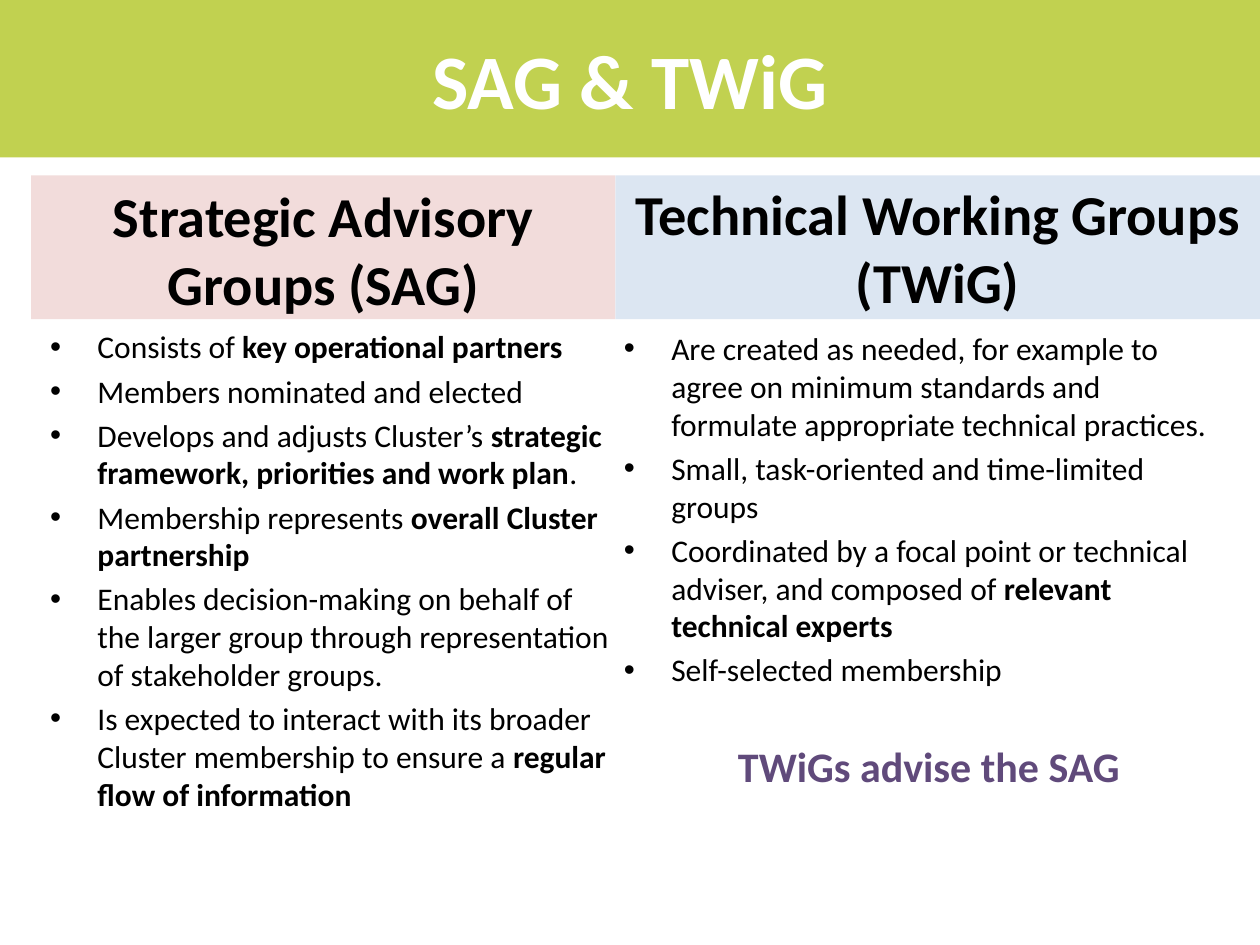
from dataclasses import dataclass

from lxml import etree
from pptx import Presentation
from pptx import util as u
from pptx.dml.color import RGBColor
from pptx.enum import shapes, text
from pptx.oxml.ns import qn

Pt = u.Pt


@dataclass(frozen=True)
class Theme:
    font: str = "Calibri"
    title_size: float = 44
    heading_size: float = 32.2
    body_size: float = 18
    callout_size: float = 24
    ink: str = "000000"
    paper: str = "FFFFFF"
    green: str = "C1D150"
    pink: str = "F2DCDB"
    blue: str = "DCE6F2"
    purple: str = "604A7B"


class SlideBuilder:
    def __init__(self, slide, theme):
        self.slide = slide
        self.theme = theme

    def fill(self, shape, color):
        shape.fill.solid()
        shape.fill.fore_color.rgb = RGBColor.from_string(color)

    def style(self, paragraph, size, color, bold=None):
        font = paragraph.font
        font.name, font.size, font.bold = self.theme.font, Pt(size), bold
        font.color.rgb = RGBColor.from_string(color)

    def frame(self, shape, anchor, side=7.2, edge=3.6):
        """Set wrapping, anchor and insets of a shape's text."""
        frame = shape.text_frame
        frame.word_wrap = True
        frame.auto_size = text.MSO_AUTO_SIZE.NONE
        frame.vertical_anchor = anchor
        frame.margin_left = frame.margin_right = Pt(side)
        frame.margin_top = frame.margin_bottom = Pt(edge)
        return frame

    def centered(self, paragraph, words, size, color):
        paragraph.text = words
        paragraph.alignment = text.PP_ALIGN.CENTER
        self.style(paragraph, size, color, bold=True)

    def title(self, words, width, height):
        title = self.slide.shapes.title
        title.left, title.top = Pt(0), Pt(0)
        title.width, title.height = Pt(width), Pt(height)
        self.fill(title, self.theme.green)
        frame = self.frame(title, text.MSO_ANCHOR.MIDDLE)
        self.centered(frame.paragraphs[0], words, self.theme.title_size, self.theme.paper)

    def heading(self, words, left, top, width, height, color, anchor):
        box = self.slide.shapes.add_shape(
            shapes.MSO_SHAPE.RECTANGLE, Pt(left), Pt(top), Pt(width), Pt(height))
        box.shadow.inherit = False
        box.line.fill.background()
        self.fill(box, color)
        frame = self.frame(box, anchor, side=5)
        self.centered(frame.paragraphs[0], words, self.theme.heading_size, self.theme.ink)

    def bullets(self, items, left, top, width, height, side=7.2, edge=3.6):
        """Add a bulleted list; words between ** marks are bold."""
        box = self.slide.shapes.add_textbox(Pt(left), Pt(top), Pt(width), Pt(height))
        frame = self.frame(box, text.MSO_ANCHOR.TOP, side, edge)
        for index, item in enumerate(items):
            para = frame.add_paragraph() if index else frame.paragraphs[0]
            para.space_before = Pt(3.6 if index else 0)
            properties = para._p.get_or_add_pPr()
            properties.set("marL", str(Pt(27)))
            properties.set("indent", str(Pt(-27)))
            etree.SubElement(properties, qn("a:buFont"), typeface="Arial")
            etree.SubElement(properties, qn("a:buChar"), char="•")
            self.style(para, self.theme.body_size, self.theme.ink)
            for part, words in enumerate(item.split("**")):
                if words:
                    span = para.add_run()
                    span.text = words
                    span.font.bold = part % 2 == 1
        return box

    def callout(self, box, words, gap):
        para = box.text_frame.add_paragraph()
        para.space_before = Pt(gap)
        self.centered(para, words, self.theme.callout_size, self.theme.purple)


SAG_POINTS = [
    "Consists of **key operational partners**",
    "Members nominated and elected",
    "Develops and adjusts Cluster’s **strategic framework, priorities and work plan**.",
    "Membership represents **overall Cluster partnership**",
    "Enables decision-making on behalf of the larger group through "
    "representation of stakeholder groups.",
    "Is expected to interact with its broader Cluster membership to ensure a "
    "**regular flow of information**",
]
TWIG_POINTS = [
    "Are created as needed, for example to agree on minimum standards and "
    "formulate appropriate technical practices.",
    "Small, task-oriented and time-limited groups",
    "Coordinated by a focal point or technical adviser, and composed of "
    "**relevant technical experts**",
    "Self-selected membership",
]


def main():
    width, height = 720, 540
    margin, middle = 17.75, 351.6
    heading_top, heading_height = 100.2, 82.2
    theme = Theme()

    deck = Presentation()
    deck.slide_width, deck.slide_height = Pt(width), Pt(height)
    page = SlideBuilder(deck.slides.add_slide(deck.slide_layouts[5]), theme)

    page.title("SAG & TWiG", width, 90)
    page.heading("Technical Working Groups (TWiG)", middle, heading_top, width - middle,
                 heading_height, theme.blue, text.MSO_ANCHOR.MIDDLE)
    page.heading("Strategic Advisory Groups (SAG)", margin, heading_top, middle - margin,
                 heading_height, theme.pink, text.MSO_ANCHOR.TOP)
    twig = page.bullets(TWIG_POINTS, middle, 185.2, 358.4, 296.6, side=5, edge=2.9)
    page.fill(twig, theme.paper)
    page.callout(twig, "TWiGs advise the SAG", gap=30)
    page.bullets(SAG_POINTS, 21.6, 183.6, 333.4, 332)

    deck.save("out.pptx")


if __name__ == "__main__":
    main()
